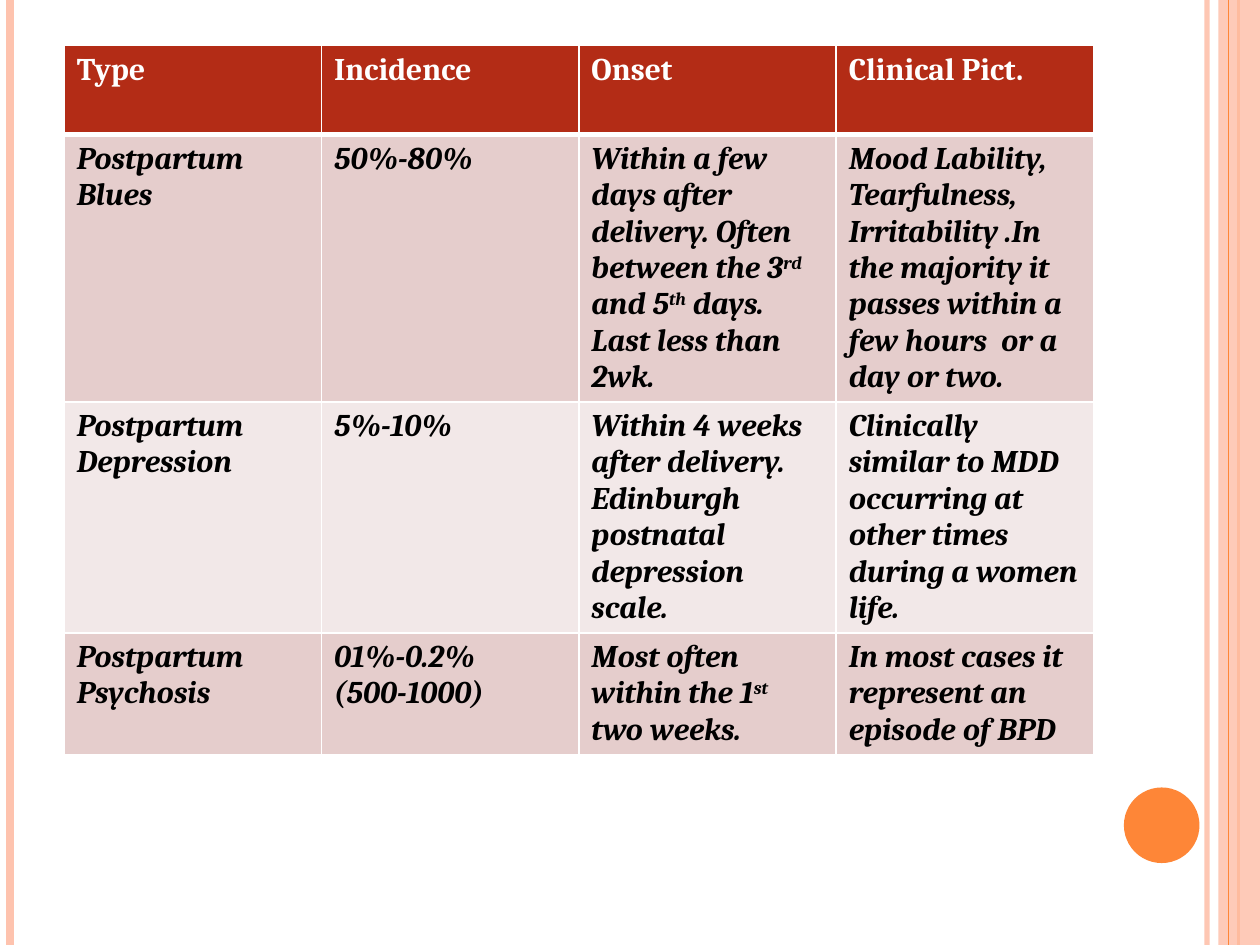
from typing import NamedTuple

from lxml import etree
from pptx import Presentation
from pptx.dml.color import RGBColor
from pptx.enum import shapes
from pptx.oxml import ns
from pptx.util import Inches, Pt

WIDTH, HEIGHT = 10, 7.5
FONT, SIZE = "Cambria", 18
PEACH, ORANGE, WHITE, BLACK = "FEC3AE", "FE8637", "FFFFFF", "000000"
HEADER_FILL, BAND_FILLS = "B32C16", ("E5CDCC", "F2E8E8")

TABLE_LEFT, TABLE_TOP, TABLE_WIDTH = 0.51, 0.36, 8.17
ROW_HEIGHTS = (0.71, 2.12, 1.83, 0.96)

# Text between carets is superscript; a line break starts a new paragraph.
ROWS = (
    ("Type", "Incidence", "Onset", "Clinical Pict."),
    ("Postpartum Blues", "50%-80%",
     "Within a few days after delivery. Often between the 3^rd^ and 5^th^ days. "
     "Last less than 2wk.",
     "Mood Lability,\nTearfulness,\nIrritability .In the majority it passes "
     "within a few hours  or a day or two."),
    ("Postpartum Depression", "5%-10%",
     "Within 4 weeks after delivery.\nEdinburgh postnatal depression scale.",
     "Clinically similar to MDD occurring at other times during a women life."),
    ("Postpartum Psychosis", "01%-0.2%\n(500-1000)",
     "Most often within the 1^st^ two weeks.",
     "In most cases it represent an episode of BPD"),
)


class Stripe(NamedTuple):
    """A line down the whole slide."""
    x: float
    color: str
    weight: float
    opacity: int = 100


class Panel(NamedTuple):
    kind: shapes.MSO_SHAPE
    left: float
    top: float
    width: float
    height: float
    color: str
    opacity: int = 100


DECORATION = (
    Stripe(9.58, PEACH, 3, 93),
    Stripe(0.08, PEACH, 4.5),
    Stripe(9.83, ORANGE, 1.5),
    Panel(shapes.MSO_SHAPE.RECTANGLE, 9.67, 0, 0.33, HEIGHT, PEACH, 87),
    Stripe(9.75, ORANGE, 0.75),
    Panel(shapes.MSO_SHAPE.OVAL, 8.92, 6.25, 0.6, 0.6, ORANGE),
)


def rgb(color: str) -> RGBColor:
    return RGBColor.from_string(color)


def add_tag(parent, tag: str, **attributes: str):
    return etree.SubElement(parent, ns.qn(tag), attributes)


def paint(fill, color: str, opacity: int = 100) -> None:
    fill.solid()
    fill.fore_color.rgb = rgb(color)
    if opacity < 100:
        clr = fill._xPr.find(".//" + ns.qn("a:srgbClr"))
        add_tag(clr, "a:alpha", val=str(opacity * 1000))


def draw_stripe(slide, stripe: Stripe) -> None:
    x = Inches(stripe.x)
    line = slide.shapes.add_connector(
        shapes.MSO_CONNECTOR.STRAIGHT, x, 0, x, Inches(HEIGHT))
    line.line.width = Pt(stripe.weight)
    paint(line.line.fill, stripe.color, stripe.opacity)
    add_tag(line._element.spPr, "a:effectLst")


def draw_panel(slide, panel: Panel) -> None:
    box = (Inches(v) for v in panel[1:5])
    sp = slide.shapes.add_shape(panel.kind, *box)
    sp.shadow.inherit = False
    sp.line.fill.background()
    paint(sp.fill, panel.color, panel.opacity)


def set_borders(cell, **weights: float) -> None:
    """Draw white borders; the fill must be set afterwards to keep XML order."""
    tcPr = cell._tc.get_or_add_tcPr()
    for side, weight in weights.items():
        ln = add_tag(tcPr, f"a:ln{side}", w=str(Pt(weight)))
        add_tag(add_tag(ln, "a:solidFill"), "a:srgbClr", val=WHITE)


def write(cell, content: str, color: str, italic: bool) -> None:
    tf = cell.text_frame
    for i, line in enumerate(content.split("\n")):
        p = tf.add_paragraph() if i else tf.paragraphs[0]
        font = p.font
        font.name, font.size, font.bold, font.italic = FONT, Pt(SIZE), True, italic
        font.color.rgb = rgb(color)
        for j, part in enumerate(line.split("^")):
            r = p.add_run()
            r.text = part
            if j % 2:
                r.font._element.set("baseline", "30000")


def draw_table(slide) -> None:
    frame = slide.shapes.add_table(
        len(ROWS), len(ROWS[0]), Inches(TABLE_LEFT), Inches(TABLE_TOP),
        Inches(TABLE_WIDTH), Inches(sum(ROW_HEIGHTS)))
    table = frame.table
    for i, (row, height) in enumerate(zip(ROWS, ROW_HEIGHTS)):
        table.rows[i].height = Inches(height)
        header = i == 0
        for j, content in enumerate(row):
            cell = table.cell(i, j)
            set_borders(cell, L=1, R=1, T=3 if i == 1 else 1, B=3 if header else 1)
            paint(cell.fill, HEADER_FILL if header else BAND_FILLS[(i - 1) % 2])
            write(cell, content, WHITE if header else BLACK, italic=not header)


def main() -> None:
    prs = Presentation()
    prs.slide_width, prs.slide_height = Inches(WIDTH), Inches(HEIGHT)
    slide = prs.slides.add_slide(prs.slide_layouts.get_by_name("Blank"))
    paint(slide.background.fill, WHITE)
    for item in DECORATION:
        if isinstance(item, Stripe):
            draw_stripe(slide, item)
        else:
            draw_panel(slide, item)
    draw_table(slide)
    prs.save("out.pptx")


if __name__ == "__main__":
    main()
